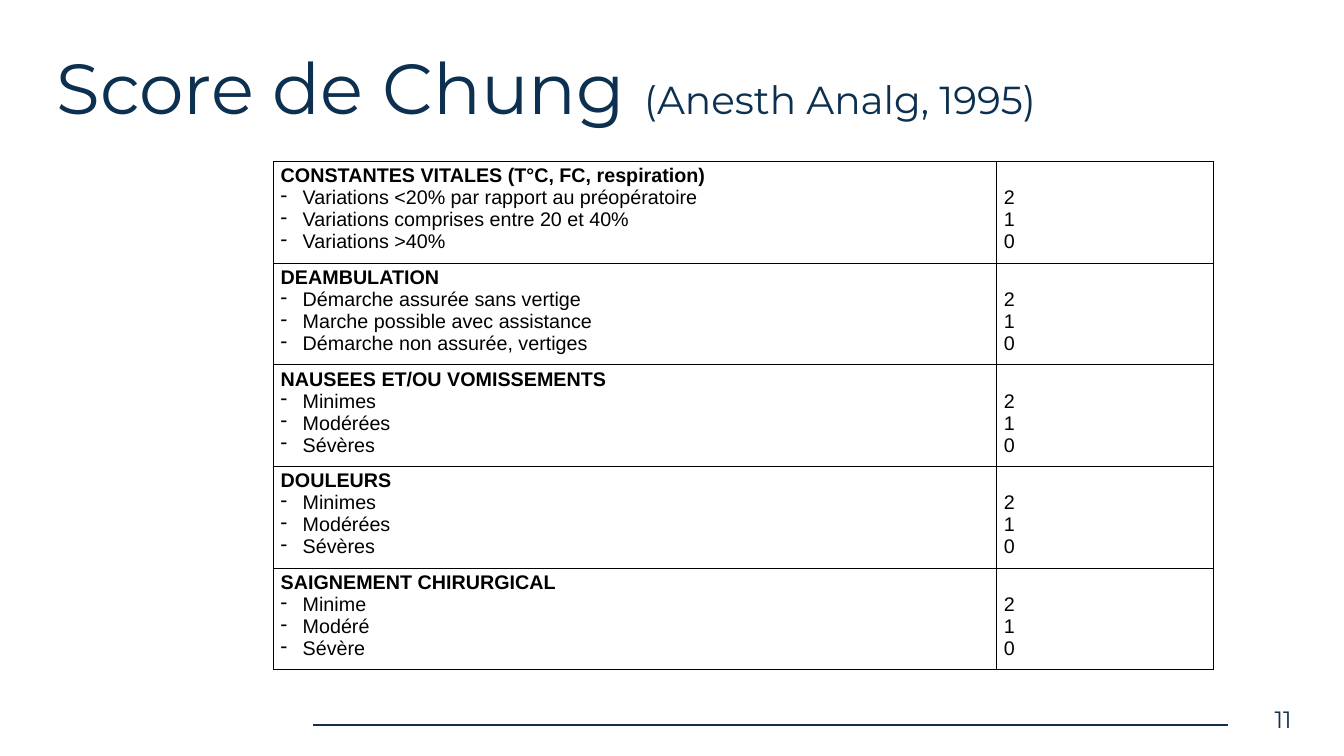
from lxml import etree
from pptx import Presentation
from pptx.dml.color import RGBColor
from pptx.enum.shapes import MSO_CONNECTOR
from pptx.enum.text import PP_ALIGN
from pptx.oxml import parse_xml
from pptx.oxml.ns import nsdecls, qn
from pptx.util import Inches, Pt

NAVY, TITLE_NAVY, BLACK, WHITE = "11314F", "0D3050", "000000", "FFFFFF"
SCORES = ["2", "1", "0"]
CRITERIA = [
    ("CONSTANTES VITALES (T°C, FC, respiration)",
     ["Variations <20% par rapport au préopératoire",
      "Variations comprises entre 20 et 40%",
      "Variations >40%"]),
    ("DEAMBULATION",
     ["Démarche assurée sans vertige",
      "Marche possible avec assistance",
      "Démarche non assurée, vertiges"]),
    ("NAUSEES ET/OU VOMISSEMENTS", ["Minimes", "Modérées", "Sévères"]),
    ("DOULEURS", ["Minimes", "Modérées", "Sévères"]),
    ("SAIGNEMENT CHIRURGICAL", ["Minime", "Modéré", "Sévère"]),
]

prs = Presentation()
prs.slide_width, prs.slide_height = Inches(18.96), Inches(10.67)
COL, ROW = prs.slide_width / 100, prs.slide_height / 100  # 100 x 100 grid
s = prs.slides.add_slide(prs.slide_layouts[6])


def rgb(color):
    return RGBColor.from_string(color)


def write(p, text, size=20, font="Arial", color=BLACK, bold=False, align=None, dash=False):
    """Add a formatted run to p, with a hanging dash bullet if asked."""
    if dash:
        pPr = p._p.get_or_add_pPr()
        pPr.set("marL", str(Inches(0.31)))
        pPr.set("indent", str(-Inches(0.31)))
        etree.SubElement(pPr, qn("a:buChar")).set("char", "-")
    if align is not None:
        p.alignment = align
    r = p.add_run()
    r.text = text
    r.font.size, r.font.name, r.font.bold = Pt(size), font, bold
    r.font.color.rgb = rgb(color)


# Footer rule
rule = s.shapes.add_connector(MSO_CONNECTOR.STRAIGHT, int(23.31 * COL), int(95.88 * ROW),
                              int(91.35 * COL), int(95.88 * ROW))
rule.line.color.rgb = rgb(NAVY)
rule.line.width = Pt(2)
etree.SubElement(rule._element.spPr, qn("a:effectLst"))

# Title
title = s.shapes.add_textbox(int(3.9 * COL), int(5.06 * ROW), int(92.19 * COL), int(10.78 * ROW))
tf = title.text_frame
tf.word_wrap = True
tf.margin_left = tf.margin_right = tf.margin_bottom = Inches(0.06)
tf.margin_top = Inches(0.08)
p = tf.paragraphs[0]
write(p, "Score de Chung ", size=72, font="Montserrat", color=TITLE_NAVY)
write(p, "(Anesth Analg, 1995)", size=39.6, font="Montserrat", color=TITLE_NAVY)

# Page number
number = s.shapes.add_textbox(int(90.3 * COL), int(92.78 * ROW), int(6.33 * COL), int(5.25 * ROW))
number.text_frame.word_wrap = True
write(number.text_frame.paragraphs[0], "11", size=24, font="Montserrat", color=NAVY,
      align=PP_ALIGN.RIGHT)

# Score table
widths, row_height = [53.8 * COL, 16.14 * COL], 12.56 * ROW
table = s.shapes.add_table(len(CRITERIA), 2, int(20.36 * COL), int(21.37 * ROW),
                           int(sum(widths)), int(row_height * len(CRITERIA))).table
table.first_row = table.horz_banding = False
for column, width in zip(table.columns, widths):
    column.width = int(width)

for i, (heading, levels) in enumerate(CRITERIA):
    table.rows[i].height = int(row_height)
    label, score = table.cell(i, 0), table.cell(i, 1)
    write(label.text_frame.paragraphs[0], heading, bold=True)
    for level in levels:
        write(label.text_frame.add_paragraph(), level, dash=True)

    score.margin_top = Inches(0.36)  # one line lower, level with the first dash
    for j, points in enumerate(SCORES):
        tf = score.text_frame
        write(tf.add_paragraph() if j else tf.paragraphs[0], points)

    for cell in (label, score):
        cell.fill.solid()
        cell.fill.fore_color.rgb = rgb(WHITE)
        for k, side in enumerate("LRTB"):
            cell._tc.get_or_add_tcPr().insert(k, parse_xml(
                f'<a:ln{side} {nsdecls("a")} w="{Pt(1)}"><a:solidFill>'
                f'<a:srgbClr val="{BLACK}"/></a:solidFill></a:ln{side}>'))

prs.save("out.pptx")
